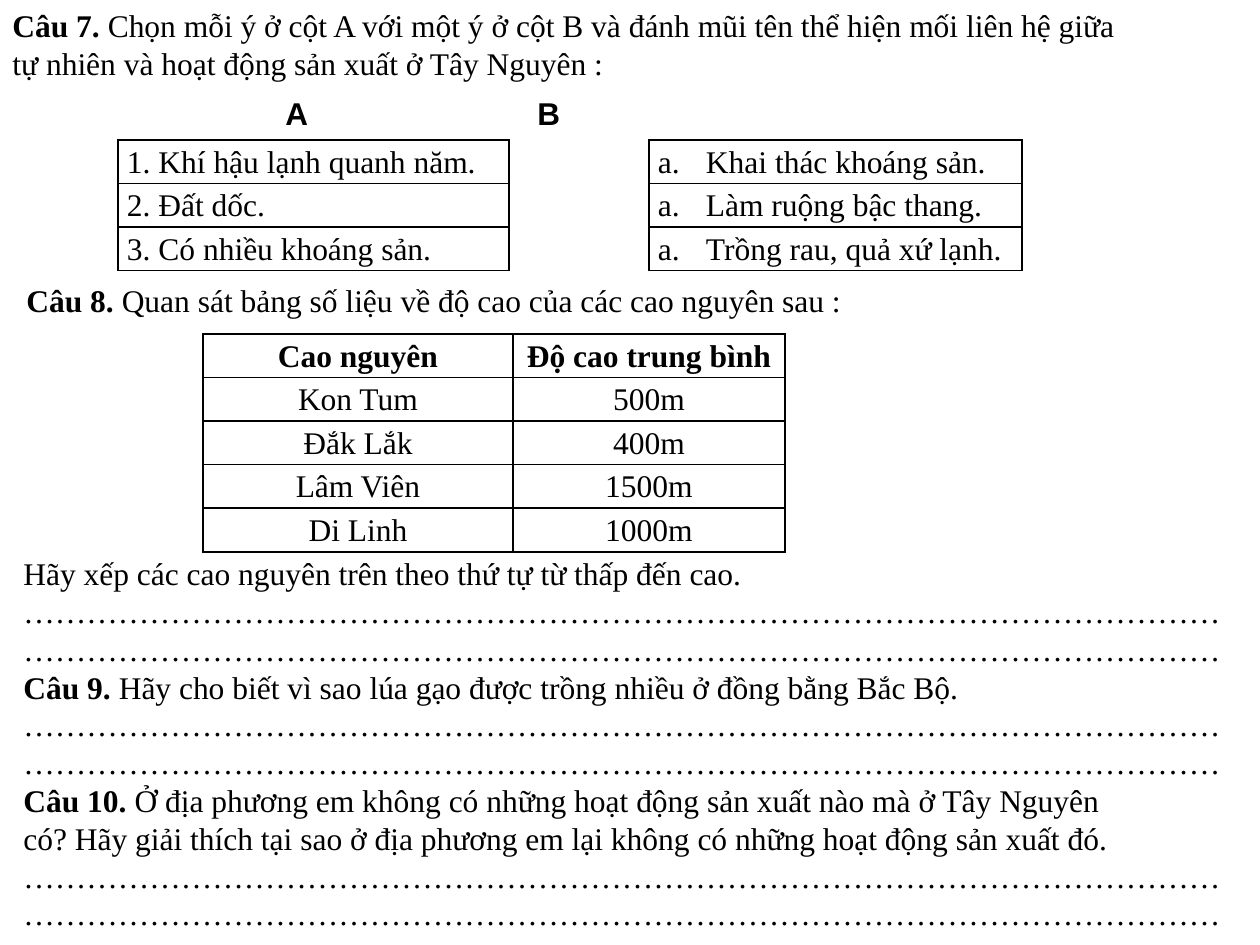
from dataclasses import dataclass

from lxml.etree import SubElement as Sub
from pptx import Presentation
from pptx.dml.color import RGBColor
from pptx.enum.text import MSO_AUTO_SIZE as Fit, PP_ALIGN as Align
from pptx.oxml.ns import qn
from pptx.util import Emu, Pt


@dataclass(frozen=True)
class Theme:
    ink: str = "000000"
    serif: str = "Times New Roman"
    sans: str = "Arial"
    size: int = 18
    rule: int = 1
    lead: float = 1.15


def px(n):
    return Emu(round(n * 914400 / 126))


def put(item, vals):
    for key, val in vals.items():
        setattr(item, key, val)


class Sheet:
    """Draws the parts of a worksheet on one slide in one style."""

    def __init__(self, slide, theme):
        self.slide = slide
        self.theme = theme

    def run(self, par, text, bold=False, face=None):
        run = par.add_run()
        run.text = text
        put(run.font, {"name": face or self.theme.serif, "size": Pt(self.theme.size), "bold": bold})
        run.font.color.rgb = RGBColor.from_string(self.theme.ink)

    def text(self, box, lines, wrap=False, face=None):
        frame = self.slide.shapes.add_textbox(*map(px, box)).text_frame
        put(frame, {"word_wrap": wrap, "auto_size": Fit.SHAPE_TO_FIT_TEXT})
        for i, (head, body) in enumerate(lines):
            par = frame.paragraphs[0] if i == 0 else frame.add_paragraph()
            if head:
                self.run(par, head, True, face)
            if body:
                self.run(par, body, False, face)

    def edge(self, cell, shown):
        props = cell._tc.get_or_add_tcPr()
        for side in "LRTB":
            line = Sub(props, qn(f"a:ln{side}"), w=str(Pt(self.theme.rule)))
            if side in shown:
                fill = Sub(line, qn("a:solidFill"))
                Sub(fill, qn("a:srgbClr"), val=self.theme.ink)
            else:
                Sub(line, qn("a:noFill"))

    def letter(self, par):
        props = par._p.get_or_add_pPr()
        props.set("marL", str(px(48)))
        props.set("indent", str(-px(48)))
        Sub(props, qn("a:buAutoNum"), type="alphaLcPeriod")

    def table(self, box, wides, rows, align, head=False, list_col=None):
        grid = self.slide.shapes.add_table(len(rows), len(wides), *map(px, box)).table
        put(grid, {"first_row": False, "horz_banding": False})
        for col, wide in zip(grid.columns, wides):
            col.width = px(wide)
        for r, row in enumerate(rows):
            for c, text in enumerate(row):
                cell = grid.cell(r, c)
                put(cell, {"margin_left": px(9), "margin_right": px(9),
                           "margin_top": 0, "margin_bottom": 0})
                self.edge(cell, "LRTB" if text else "LR")
                cell.fill.background()
                par = cell.text_frame.paragraphs[0]
                put(par, {"alignment": align, "line_spacing": self.theme.lead})
                if c == list_col:
                    self.letter(par)
                if text:
                    self.run(par, text, head and r == 0)


def main():
    deck = Presentation()
    put(deck, {"slide_width": px(1260), "slide_height": px(945)})
    theme = Theme()
    sheet = Sheet(deck.slides.add_slide(deck.slide_layouts[6]), theme)

    sheet.text((0, 0, 1139, 89), [
        ("Câu 7.", " Chọn mỗi ý ở cột A với một ý ở cột B và đánh mũi tên thể hiện mối liên hệ giữa"),
        ("", "tự nhiên và hoạt động sản xuất ở Tây Nguyên\u00a0:"),
    ])
    sheet.text((273, 88, 630, 50), [("A\t\t\t\tB", "")], wrap=True, face=theme.sans)
    sheet.table((118, 140, 904, 130), (391, 140, 373), [
        ("1. Khí hậu lạnh quanh năm.", "", "Khai thác khoáng sản."),
        ("2. Đất dốc.", "", "Làm ruộng bậc thang."),
        ("3. Có nhiều khoáng sản.", "", "Trồng rau, quả xứ lạnh."),
    ], Align.JUSTIFY, list_col=2)

    sheet.text((14, 275, 849, 89), [
        ("Câu 8. ", "Quan sát bảng số liệu về độ cao của các cao nguyên sau\u00a0:"),
    ])
    sheet.table((203, 334, 582, 218), (310, 272), [
        ("Cao nguyên", "Độ cao trung bình"),
        ("Kon Tum", "500m"),
        ("Đắk Lắk", "400m"),
        ("Lâm Viên", "1500m"),
        ("Di Linh", "1000m"),
    ], Align.CENTER, head=True)

    blank = [("", "…" * 38)] * 2
    sheet.text((11, 548, 1251, 394), [
        ("", "Hãy xếp các cao nguyên trên theo thứ tự từ thấp đến cao."),
        *blank,
        ("Câu 9.", " Hãy cho biết vì sao lúa gạo được trồng nhiều ở đồng bằng Bắc Bộ."),
        *blank,
        ("Câu 10.", " Ở địa phương em không có những hoạt động sản xuất nào mà ở Tây Nguyên"),
        ("", "có? Hãy giải thích tại sao ở địa phương em lại không có những hoạt động sản xuất đó."),
        *blank,
    ])
    deck.save("out.pptx")


if __name__ == "__main__":
    main()
